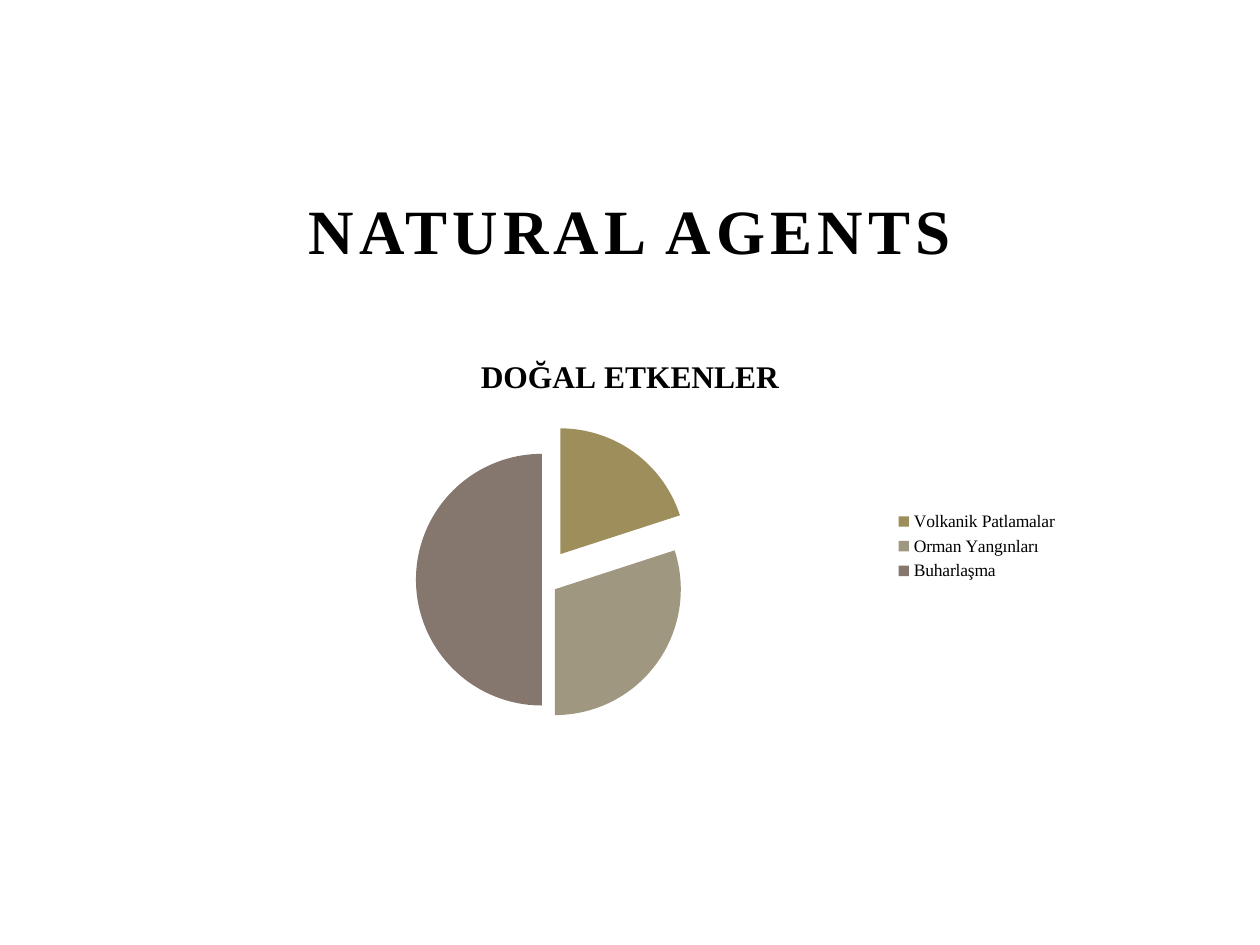
from lxml import etree
from pptx import Presentation
from pptx.chart.data import CategoryChartData
from pptx.dml.color import RGBColor
from pptx.enum.chart import XL_CHART_TYPE, XL_LEGEND_POSITION
from pptx.enum.text import MSO_ANCHOR, PP_ALIGN
from pptx.oxml.ns import qn
from pptx.util import Inches, Pt

PIE = XL_CHART_TYPE.PIE
LEGEND_RIGHT = XL_LEGEND_POSITION.RIGHT
BOTTOM = MSO_ANCHOR.BOTTOM
CENTER = PP_ALIGN.CENTER

# Content
FONT = "Times New Roman"
COLORS = {"text": "000000", "gold": "9E8E5C", "khaki": "A09781", "brown": "85776D"}
TITLE = "NATURAL AGENTS"
CHART_TITLE = "DOĞAL ETKENLER"
# Category, value, colour, explosion in percent of the radius
SLICES = [
    ("Volkanik Patlamalar", 20, "gold", 25),
    ("Orman Yangınları", 30, "khaki", 13),
    ("Buharlaşma", 50, "brown", 0),
]
# Unexploded pie as fractions of the chart, leaving room for the moved slices
PLOT_AREA = {"x": 0.25, "y": 0.28, "w": 0.3, "h": 0.6}
LEFT, WIDTH = Inches(1.5), Inches(7)


def style_font(font, size, bold=False):
    font.name = FONT
    font.size = Pt(size)
    font.bold = bold
    font.color.rgb = RGBColor.from_string(COLORS["text"])


def add_title(slide):
    title = slide.shapes.title
    title.left, title.top = LEFT, Inches(1.42)
    title.width, title.height = WIDTH, Inches(0.75)
    frame = title.text_frame
    frame.word_wrap = True
    frame.vertical_anchor = BOTTOM
    paragraph = frame.paragraphs[0]
    paragraph.alignment = CENTER
    run = paragraph.add_run()
    run.text = TITLE
    style_font(run.font, 36, bold=True)
    run.font._element.set("spc", "300")


def set_plot_area(chart):
    plot_area = chart._chartSpace.chart.plotArea
    for old_layout in plot_area.findall(qn("c:layout")):
        plot_area.remove(old_layout)
    layout = etree.Element(qn("c:layout"))
    manual = etree.SubElement(layout, qn("c:manualLayout"))
    settings = {"layoutTarget": "inner", "xMode": "edge", "yMode": "edge", **PLOT_AREA}
    for name, value in settings.items():
        etree.SubElement(manual, qn(f"c:{name}")).set("val", str(value))
    plot_area.insert(0, layout)


def add_pie(slide):
    data = CategoryChartData()
    data.categories = [name for name, *_ in SLICES]
    data.add_series(CHART_TITLE, [value for _, value, *_ in SLICES])
    chart = slide.shapes.add_chart(PIE, LEFT, Inches(2.67), WIDTH, Inches(3.33), data).chart
    style_font(chart.font, 10)

    # Chart title and legend
    chart.has_title = True
    run = chart.chart_title.text_frame.paragraphs[0].add_run()
    run.text = CHART_TITLE
    style_font(run.font, 18, bold=True)
    chart.has_legend = True
    chart.legend.position = LEGEND_RIGHT
    chart.legend.include_in_layout = False

    # Slices
    plot = chart.plots[0]
    plot.vary_by_categories = True
    series = plot.series[0]
    for index, (_, _, color, explosion) in enumerate(SLICES):
        fill = series.points[index].format.fill
        fill.solid()
        fill.fore_color.rgb = RGBColor.from_string(COLORS[color])
        element = etree.Element(qn("c:explosion"))
        element.set("val", str(explosion))
        series._element.findall(qn("c:dPt"))[index].find(qn("c:idx")).addnext(element)
    set_plot_area(chart)


def main():
    presentation = Presentation()
    presentation.slide_width, presentation.slide_height = Inches(10), Inches(7.5)
    slide = presentation.slides.add_slide(presentation.slide_layouts[5])
    add_title(slide)
    add_pie(slide)
    presentation.save("out.pptx")


if __name__ == "__main__":
    main()
